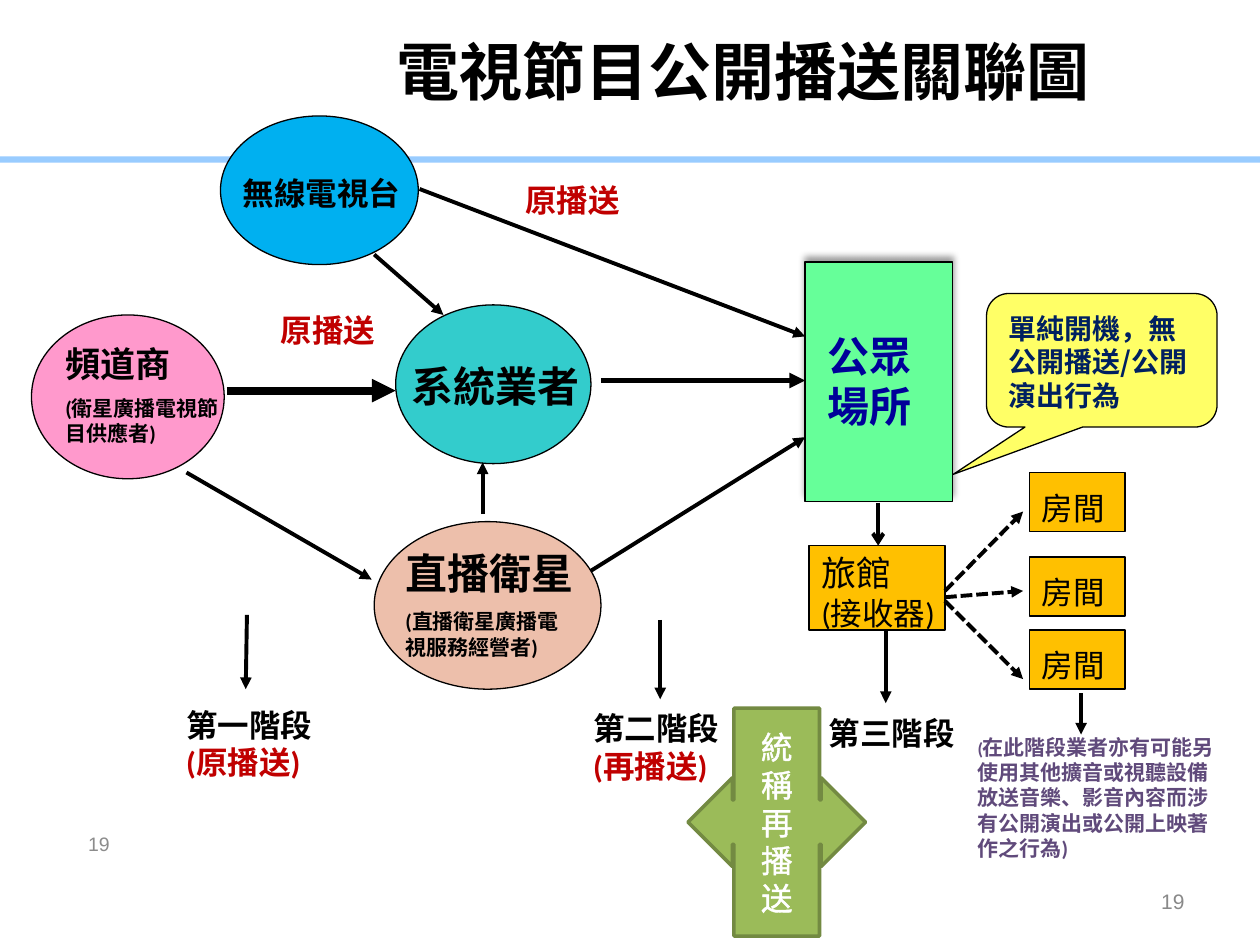
"""Build a slide that maps how television programmes reach the public."""
from lxml.etree import SubElement
from pptx import Presentation
from pptx.dml.color import RGBColor
from pptx.enum.dml import MSO_LINE
from pptx.enum.shapes import MSO_CONNECTOR, MSO_SHAPE
from pptx.enum.text import MSO_ANCHOR, MSO_AUTO_SIZE, PP_ALIGN
from pptx.oxml import parse_xml
from pptx.oxml.ns import qn
from pptx.util import Pt

PX = 9144
NAMESPACE = 'xmlns:a="http://schemas.openxmlformats.org/drawingml/2006/main"'
BLACK, RED, NAVY, PURPLE = "000000", "C00000", "002060", "604A7B"
ORANGE, GREEN, WHITE = "FFC000", "9BBB59", "FFFFFF"
CJK = "Noto Sans CJK SC"

TITLE = ("電視節目公開播送關聯圖", (305, 21, 586, 71))
BAR = (-4, 124, 1006, 5)
ELLIPSES = [
    ((25, 250, 153, 130), "FF99CC"),
    ((314, 242, 155, 126), "33CCCC"),
    ((175, 92, 157, 118), "00B0F0"),
    ((297, 414, 180, 133), "EDBFAB"),
]
PUBLIC_PLACE = (639, 208, 117, 190)
HOTEL = (642, 433, 108, 67)
SPEECH = (783, 233, 183, 106)
SPEECH_ADJUSTMENTS = (-0.644, 0.854, 0.167)
RELAY = ("統稱再播送", (546, 562, 141, 181))
ROOM_TOPS = (375, 442, 500)
ROOM_LEFT, ROOM_WIDTH, ROOM_HEIGHT = 817, 76, 47

# Each label: box, then paragraphs of (text, size, colour) runs.
LABELS = [
    ((42, 267, 142, 93), [[("頻道商", 20, BLACK)], [("(衛星廣播電視節目供應者)", 12, BLACK)]]),
    ((183, 133, 157, 40), [[("無線電視台", 18, BLACK)]]),
    ((317, 281, 165, 50), [[("系統業者", 24, BLACK)]]),
    ((312, 430, 157, 100), [[("直播衛星", 24, BLACK)], [("(直播衛星廣播電視服務經營者)", 12, BLACK)]]),
    ((647, 257, 93, 91), [[("公眾場所", 24, "000099")]]),
    ((648, 562, 150, 40), [[("第三階段", 18, BLACK)]]),
    ((766, 578, 208, 111), [[
        ("(", 10, PURPLE),
        ("在此階段業者亦有可能另使用其他擴音或視聽設備放送音樂、影音內容而涉有公開演出或公開上映著作之行為)", 12, PURPLE),
    ]]),
    ((213, 242, 157, 40), [[("原播送", 18, RED)]]),
    ((407, 139, 157, 40), [[("原播送", 18, RED)]]),
]
STAGES = [
    ((138, 555, 157, 71), [[("第一階段", 18, BLACK)], [("(原播送)", 18, RED)]]),
    ((461, 558, 142, 71), [[("第二階段", 18, BLACK)], [("(再播送)", 18, RED)]]),
]
HOTEL_LABEL = ((642, 433, 142, 73), [[("旅館", 20, BLACK)], [("(接收器)", 18, BLACK)]])
SPEECH_LABEL = ((791, 242, 167, 90), [[("單純開機，無公開播送/公開演出行為", 16, NAVY)]])
PAGE_NUMBERS = [((717, 695, 233, 40), 12, "898989"), ((39, 656, 58, 27), 11.1, "8C8C8C")]

ARROWS = [
    (180, 310, 314, 310, 4.5),
    (477, 302, 639, 302, 3),
    (196, 488, 195, 547, 2.25),
    (703, 500, 703, 558, 2.25),
    (297, 202, 352, 250, 2.25),
    (148, 375, 295, 460, 2.25),
    (469, 453, 639, 347, 2.25),
    (524, 492, 524, 555, 2.25),
    (383, 408, 383, 367, 2.25),
    (858, 550, 858, 583, 2.25),
    (333, 150, 639, 267, 2.25),
]
OPEN_ARROW = (697, 399, 697, 433, 2.25)
DASHED_ARROWS = [(750, 469, 812, 406, 2.25), (750, 474, 812, 469, 2.25), (750, 477, 812, 539, 2.25)]


def color(value):
    return RGBColor.from_string(value)


def scaled(lengths):
    return [length * PX for length in lengths]


def apply_format(target, values):
    for name, value in values.items():
        setattr(target, name, value)


def format_font(font, size, value, name="Calibri", bold=True):
    apply_format(font, {"size": Pt(size), "name": name, "bold": bold})
    font.color.rgb = color(value)


def add_block(slide, kind, box, fill, line=BLACK, width=0.75):
    shape = slide.shapes.add_shape(kind, *scaled(box))
    shape.shadow.inherit = False
    shape.fill.solid()
    shape.fill.fore_color.rgb = color(fill)
    if line:
        shape.line.color.rgb = color(line)
        shape.line.width = Pt(width)
    else:
        shape.line.fill.background()
    return shape


def add_label(slide, box, paragraphs, gap=6, name="Calibri", bold=True,
              align=PP_ALIGN.LEFT, anchor=MSO_ANCHOR.TOP):
    frame = slide.shapes.add_textbox(*scaled(box)).text_frame
    apply_format(frame, {"word_wrap": True, "vertical_anchor": anchor})
    for index, runs in enumerate(paragraphs):
        paragraph = frame.add_paragraph() if index else frame.paragraphs[0]
        paragraph.alignment = align
        if index:
            paragraph.space_before = Pt(gap)
        for text, size, value in runs:
            run = paragraph.add_run()
            run.text = text
            format_font(run.font, size, value, name, bold)


def add_arrow(slide, points, head="triangle", dash=None):
    *ends, width = points
    connector = slide.shapes.add_connector(MSO_CONNECTOR.STRAIGHT, *scaled(ends))
    connector.line.color.rgb = color(BLACK)
    apply_format(connector.line, {"width": Pt(width), "dash_style": dash})
    properties = connector._element.spPr
    SubElement(properties.find(qn("a:ln")), qn("a:tailEnd"), type=head)
    SubElement(properties, qn("a:effectLst"))


def add_title(slide):
    text, box = TITLE
    title = slide.shapes.title
    apply_format(title, dict(zip(("left", "top", "width", "height"), scaled(box))))
    frame = title.text_frame
    frame.text = text
    apply_format(frame, {"word_wrap": True, "auto_size": MSO_AUTO_SIZE.NONE, "vertical_anchor": MSO_ANCHOR.TOP})
    frame.paragraphs[0].alignment = PP_ALIGN.LEFT
    format_font(frame.paragraphs[0].runs[0].font, 36, BLACK, CJK)


def add_public_place(slide):
    shape = add_block(slide, MSO_SHAPE.RECTANGLE, PUBLIC_PLACE, "66FF99")
    effects = shape._element.spPr.find(qn("a:effectLst"))
    effects.append(parse_xml(
        f'<a:outerShdw {NAMESPACE} blurRad="50800" dist="38100" dir="16200000" rotWithShape="0">'
        '<a:srgbClr val="000000"><a:alpha val="40000"/></a:srgbClr></a:outerShdw>'))


def add_relay(slide):
    text, box = RELAY
    shape = add_block(slide, MSO_SHAPE.LEFT_RIGHT_ARROW_CALLOUT, box, GREEN, "738A42", 2)
    frame = shape.text_frame
    frame.text = text
    apply_format(frame, {"word_wrap": True, "vertical_anchor": MSO_ANCHOR.MIDDLE})
    frame.paragraphs[0].alignment = PP_ALIGN.CENTER
    run = frame.paragraphs[0].runs[0]
    format_font(run.font, 18, WHITE, bold=False)
    run._r.get_or_add_rPr().insert(0, parse_xml(
        f'<a:ln {NAMESPACE} w="18415"><a:solidFill><a:srgbClr val="{WHITE}"/></a:solidFill></a:ln>'))


def main():
    presentation = Presentation()
    apply_format(presentation, {"slide_width": 1000 * PX, "slide_height": 750 * PX})
    slide = presentation.slides.add_slide(presentation.slide_layouts[5])
    add_title(slide)
    add_block(slide, MSO_SHAPE.RECTANGLE, BAR, "99CCFF", None)
    for box, fill in ELLIPSES:
        add_block(slide, MSO_SHAPE.OVAL, box, fill)
    add_public_place(slide)
    add_block(slide, MSO_SHAPE.RECTANGLE, HOTEL, ORANGE)
    add_label(slide, *HOTEL_LABEL, gap=0, bold=False)
    for top in ROOM_TOPS:
        add_block(slide, MSO_SHAPE.RECTANGLE, (ROOM_LEFT, top, ROOM_WIDTH, ROOM_HEIGHT), ORANGE)
        add_label(slide, (ROOM_LEFT, top + 8, 134, 40), [[("房間", 18, BLACK)]], bold=False)
    speech = add_block(slide, MSO_SHAPE.ROUNDED_RECTANGULAR_CALLOUT, SPEECH, "FFFF66")
    for index, value in enumerate(SPEECH_ADJUSTMENTS):
        speech.adjustments[index] = value
    add_label(slide, *SPEECH_LABEL, name=CJK)
    for points in ARROWS:
        add_arrow(slide, points)
    add_arrow(slide, OPEN_ARROW, "arrow")
    for points in DASHED_ARROWS:
        add_arrow(slide, points, dash=MSO_LINE.SQUARE_DOT)
    for box, paragraphs in STAGES:
        add_label(slide, box, paragraphs, gap=0)
    add_relay(slide)
    for box, paragraphs in LABELS:
        add_label(slide, box, paragraphs)
    for box, size, value in PAGE_NUMBERS:
        add_label(slide, box, [[("19", size, value)]], name="Arial", bold=False,
                  align=PP_ALIGN.RIGHT, anchor=MSO_ANCHOR.MIDDLE)
    presentation.save("out.pptx")


if __name__ == "__main__":
    main()
